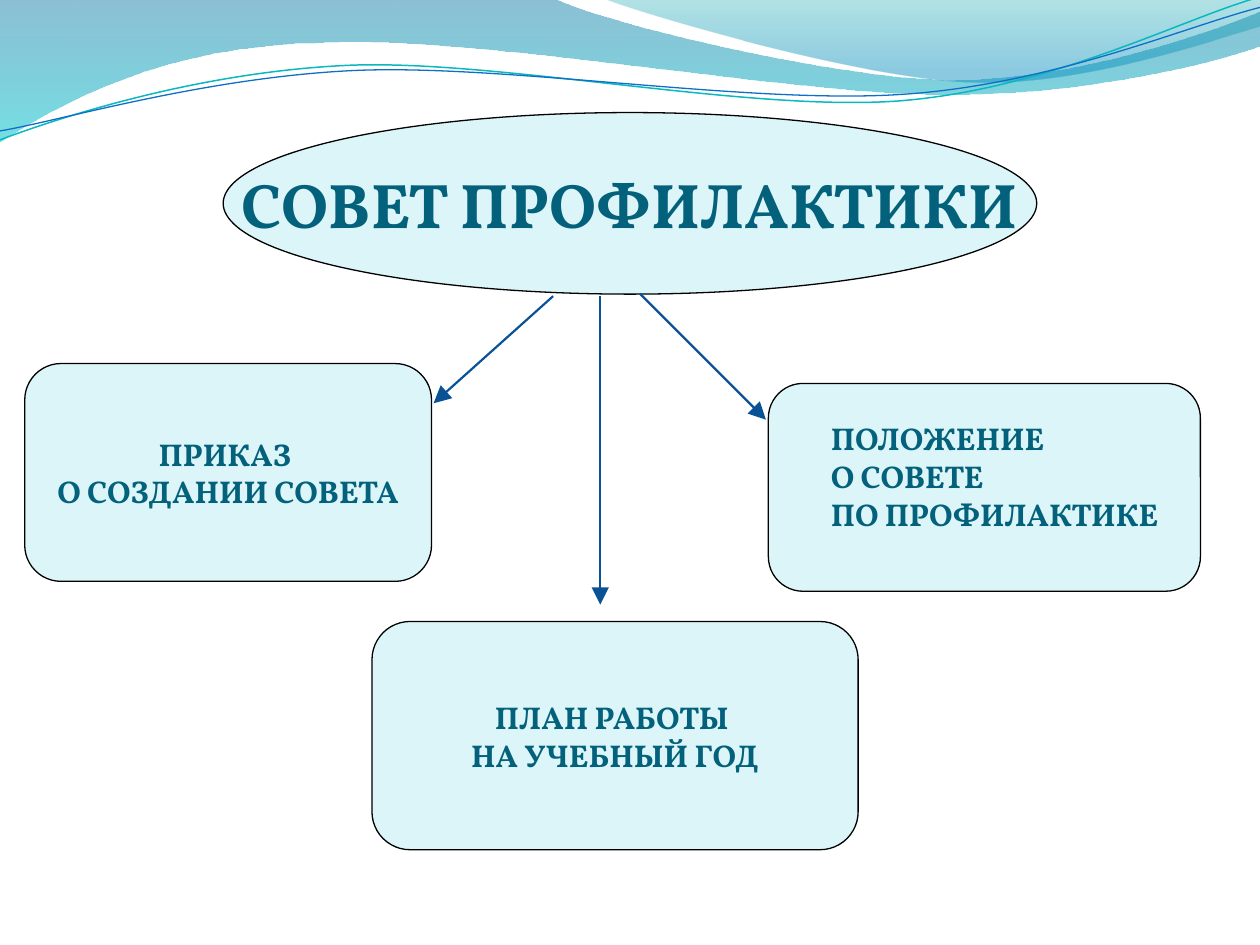
from dataclasses import dataclass

from lxml import etree
from pptx import Presentation
from pptx import util as u
from pptx.dml.color import RGBColor
from pptx.enum import shapes, text
from pptx.oxml.ns import qn


@dataclass(frozen=True)
class Theme:
    font: str = "Vollkorn"
    ink: str = "04617B"
    box_fill: str = "DBF5F9"
    box_line: str = "000000"
    arrow: str = "095295"
    title_size: float = 36
    label_size: float = 18
    box_line_width: float = 0.75
    arrow_width: float = 1.25


THEME = Theme()


@dataclass(frozen=True)
class Box:
    """Lengths in centimetres."""
    left: float
    top: float
    width: float
    height: float
    lines: tuple = ()
    size: float = THEME.label_size
    kind: int = shapes.MSO_SHAPE.FLOWCHART_ALTERNATE_PROCESS


@dataclass(frozen=True)
class Arrow:
    start: tuple
    end: tuple


@dataclass(frozen=True)
class Wave:
    """Each segment holds one point (straight) or three (cubic curve)."""
    start: tuple
    segments: tuple
    stops: tuple = ()  # position, colour, opacity in percent
    line: str = ""
    line_width: float = 0
    rotation: float = 0


WAVES = (
    Wave((0, -0.03), (
        ((11.18, -0.03),),
        ((12.09, 0.43), (16.87, 1.6), (19.25, 1.6)),
        ((21.67, 1.6), (24.33, 0.66), (25.4, 0.23)),
        ((25.43, 0.91),),
        ((24.97, 1.12), (22.1, 1.93), (18.95, 1.9)),
        ((15.8, 1.9), (9.7, 0.71), (6.53, 0.86)),
        ((3.28, 0.89), (1.17, 2.11), (-0.03, 2.87)),
    ), stops=((0, "0074A1", 45), (1, "00C6CF", 55))),
    Wave((12.17, -0.03), (
        ((12.93, 0.28), (17.32, 1.57), (19.53, 1.65)),
        ((21.74, 1.75), (24.41, 0.81), (25.4, 0.53)),
        ((25.4, 0),),
    ), stops=((0, "00A1A9", 30), (0.8, "008BBF", 45))),
    Wave((-0.05, 2.22), (
        ((1.19, 1.82), (4.02, 1.04), (7.05, 1.05)),
        ((10.05, 1.07), (15.02, 2.37), (18.08, 2.29)),
        ((21.13, 2.2), (23.86, 0.91), (25.41, 0.55)),
    ), line="0AB8BF", line_width=0.85, rotation=357.3),
    Wave((-0.04, 2.04), (
        ((1.16, 1.9), (4.17, 1.15), (7.2, 1.16)),
        ((10.25, 1.18), (15.13, 2.23), (18.19, 2.16)),
        ((21.22, 2.1), (23.93, 1.06), (25.45, 0.75)),
    ), line="0F6FC6", line_width=0.75, rotation=357.3),
)
BOXES = (
    Box(0.5, 7.33, 8.2, 4.39, ("ПРИКАЗ ", "О СОЗДАНИИ СОВЕТА")),
    Box(15.49, 7.73, 8.71, 4.19),
    Box(7.5, 12.53, 9.8, 4.6, ("ПЛАН РАБОТЫ ", "НА УЧЕБНЫЙ ГОД")),
    Box(4.5, 2.27, 16.4, 3.66, ("СОВЕТ ПРОФИЛАКТИКИ",),
        THEME.title_size, shapes.MSO_SHAPE.OVAL),
)
REGULATION = Box(16.5, 8.33, 7.39, 3.3,
                 ("ПОЛОЖЕНИЕ", "О СОВЕТЕ", "ПО ПРОФИЛАКТИКЕ"))
ARROWS = (
    Arrow((12.9, 5.92), (15.44, 8.46)),
    Arrow((11.15, 5.97), (8.74, 8.13)),
    Arrow((12.1, 5.97), (12.1, 12.19)),
)


def rgb(value: str) -> RGBColor:
    return RGBColor.from_string(value)


def set_line(line, color: str, width: float) -> None:
    line.color.rgb = rgb(color)
    line.width = u.Pt(width)


def bend(shape, segments: tuple) -> None:
    """Join each three-point run of straight steps into one cubic curve."""
    steps = iter(list(shape._element.spPr.iter(qn("a:lnTo"))))
    for segment in segments:
        run = [next(steps) for _ in segment]
        if len(run) == 3:
            curve = etree.Element(qn("a:cubicBezTo"))
            run[0].addprevious(curve)
            for step in run:
                curve.append(step[0])
                step.getparent().remove(step)


def draw_wave(slide, wave: Wave) -> None:
    x, y = wave.start
    builder = slide.shapes.build_freeform(u.Cm(x), u.Cm(y))
    points = [(u.Cm(px), u.Cm(py)) for segment in wave.segments for px, py in segment]
    builder.add_line_segments(points, close=bool(wave.stops))
    shape = builder.convert_to_shape()
    bend(shape, wave.segments)
    shape.rotation = wave.rotation
    shape.shadow.inherit = False
    if not wave.stops:
        shape.fill.background()
        set_line(shape.line, wave.line, wave.line_width)
        return
    shape.fill.gradient()
    shape.fill.gradient_angle = 270
    for stop, (position, color, _) in zip(shape.fill.gradient_stops, wave.stops):
        stop.position = position
        stop.color.rgb = rgb(color)
    colors = list(shape._element.spPr.iter(qn("a:srgbClr")))
    for element, (_, _, opacity) in zip(colors, wave.stops):
        etree.SubElement(element, qn("a:alpha")).set("val", str(opacity * 1000))
    shape.line.fill.background()


def write_lines(frame, box: Box, alignment) -> None:
    for index, line in enumerate(box.lines):
        paragraph = frame.add_paragraph() if index else frame.paragraphs[0]
        paragraph.alignment = alignment
        run = paragraph.add_run()
        run.text = line
        run.font.name = THEME.font
        run.font.size = u.Pt(box.size)
        run.font.bold = True
        run.font.color.rgb = rgb(THEME.ink)


def place(box: Box) -> tuple:
    return tuple(u.Cm(value) for value in (box.left, box.top, box.width, box.height))


def draw_box(slide, box: Box) -> None:
    shape = slide.shapes.add_shape(box.kind, *place(box))
    shape.shadow.inherit = False
    shape.fill.solid()
    shape.fill.fore_color.rgb = rgb(THEME.box_fill)
    set_line(shape.line, THEME.box_line, THEME.box_line_width)
    shape.text_frame.word_wrap = False
    shape.text_frame.vertical_anchor = text.MSO_ANCHOR.MIDDLE
    write_lines(shape.text_frame, box, text.PP_ALIGN.CENTER)


def draw_text(slide, box: Box) -> None:
    frame = slide.shapes.add_textbox(*place(box)).text_frame
    frame.word_wrap = True
    write_lines(frame, box, text.PP_ALIGN.LEFT)


def draw_arrow(slide, arrow: Arrow) -> None:
    ends = (u.Cm(value) for value in (*arrow.start, *arrow.end))
    connector = slide.shapes.add_connector(shapes.MSO_CONNECTOR.STRAIGHT, *ends)
    set_line(connector.line, THEME.arrow, THEME.arrow_width)
    properties = connector._element.spPr
    etree.SubElement(properties.find(qn("a:ln")), qn("a:tailEnd"),
                     type="triangle", w="lg", len="lg")
    etree.SubElement(properties, qn("a:effectLst"))


def main() -> None:
    presentation = Presentation()
    presentation.slide_width = u.Cm(25.4)
    presentation.slide_height = u.Cm(19.05)
    slide = presentation.slides.add_slide(presentation.slide_layouts[6])
    for wave in WAVES:
        draw_wave(slide, wave)
    for box in BOXES:
        draw_box(slide, box)
    draw_text(slide, REGULATION)
    for arrow in ARROWS:
        draw_arrow(slide, arrow)
    presentation.save("out.pptx")


if __name__ == "__main__":
    main()
